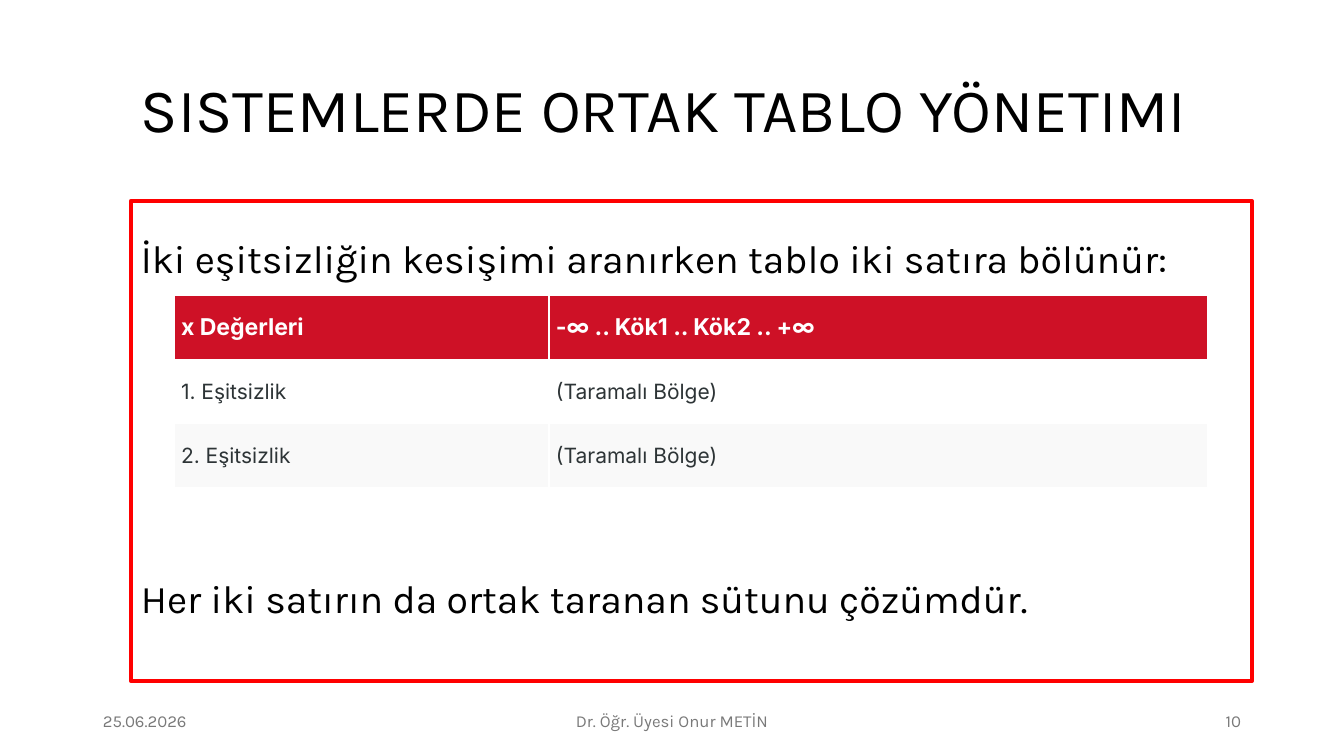
import pptx
import pptx.util
import pptx.dml.color
import pptx.enum.shapes
import pptx.enum.text

ALIGN = pptx.enum.text.PP_ALIGN
MIDDLE = pptx.enum.text.MSO_ANCHOR.MIDDLE
TOP = pptx.enum.text.MSO_ANCHOR.TOP


def px(n):
    return pptx.util.Emu(round(n * 914400 / 100.8))


def color(code):
    return pptx.dml.color.RGBColor.from_string(code)


class Deck:
    """Holds the style and the current slide and draws each kind of element."""

    font = "Karla"
    cell_font = "Inter"
    ink = "000000"
    gray = "797979"
    red = "FF0000"
    head = ("CE1126", "FFFFFF", 16.5, True)
    rows = ((None, "2D3436", 15, False), ("F9F9F9", "2D3436", 15, False))

    def __init__(self):
        self.prs = pptx.Presentation()
        self.prs.slide_width = px(1344)
        self.prs.slide_height = px(756)
        self.slide = self.prs.slides.add_slide(self.prs.slide_layouts[6])

    def style(self, para, size, code, font, bold=False):
        for run in para.runs:
            run.font.size = pptx.util.Pt(size)
            run.font.name = font
            run.font.bold = bold
            run.font.color.rgb = color(code)

    def fill(self, frame, lines, size, code, align, space, gap=0):
        frame.word_wrap = True
        frame.text = "\n".join(lines)
        for i, para in enumerate(frame.paragraphs):
            para.alignment = align
            para.line_spacing = space
            para.space_before = pptx.util.Pt(gap if i else 0)
            self.style(para, size, code, self.font)

    def text(self, box, line, size, code, align=ALIGN.LEFT, space=1.0):
        shape = self.slide.shapes.add_textbox(*map(px, box))
        shape.text_frame.vertical_anchor = MIDDLE
        self.fill(shape.text_frame, [line], size, code, align, space)

    def panel(self, box, lines, size, gap):
        kind = pptx.enum.shapes.MSO_SHAPE.RECTANGLE
        shape = self.slide.shapes.add_shape(kind, *map(px, box))
        shape.shadow.inherit = False
        shape.fill.background()
        shape.line.color.rgb = color(self.red)
        shape.line.width = pptx.util.Pt(3)
        frame = shape.text_frame
        frame.vertical_anchor = TOP
        frame.margin_top = px(10)
        self.fill(frame, lines, size, self.ink, ALIGN.JUSTIFY, 1.5, gap)

    def table(self, box, cols, data):
        frame = self.slide.shapes.add_table(len(data), len(cols), *map(px, box))
        table = frame.table
        for col, wide in zip(table.columns, cols):
            col.width = px(wide)
        for r, words in enumerate(data):
            look = self.rows[(r - 1) % 2] if r else self.head
            for c, word in enumerate(words):
                self.cell(table.cell(r, c), word, *look)

    def cell(self, cell, word, back, code, size, bold):
        cell.margin_left = cell.margin_right = px(7)
        cell.margin_top = cell.margin_bottom = px(3)
        cell.vertical_anchor = MIDDLE
        if back:
            cell.fill.solid()
            cell.fill.fore_color.rgb = color(back)
        else:
            cell.fill.background()
        cell.text_frame.text = word
        self.style(cell.text_frame.paragraphs[0], size, code,
                   self.cell_font, bold)


def main():
    deck = Deck()
    deck.text((131, 40, 1121, 146), "SISTEMLERDE ORTAK TABLO YÖNETIMI",
              44, deck.ink, space=0.9)
    deck.panel((131, 201, 1121, 480), [
        "İki eşitsizliğin kesişimi aranırken tablo iki satıra bölünür:",
        "Her iki satırın da ortak taranan sütunu çözümdür.",
    ], 28, 192)
    for left, wide, line, align in (
        (93, 302, "25.06.2026", ALIGN.LEFT),
        (445, 454, "Dr. Öğr. Üyesi Onur METİN", ALIGN.CENTER),
        (949, 302, "10", ALIGN.RIGHT),
    ):
        deck.text((left, 701, wide, 40), line, 12, deck.gray, align)
    deck.table((174, 295, 1034, 193), (375, 659), [
        ("x Değerleri", "-∞ .. Kök1 .. Kök2 .. +∞"),
        ("1. Eşitsizlik", "(Taramalı Bölge)"),
        ("2. Eşitsizlik", "(Taramalı Bölge)"),
    ])
    deck.prs.save("out.pptx")


if __name__ == "__main__":
    main()
